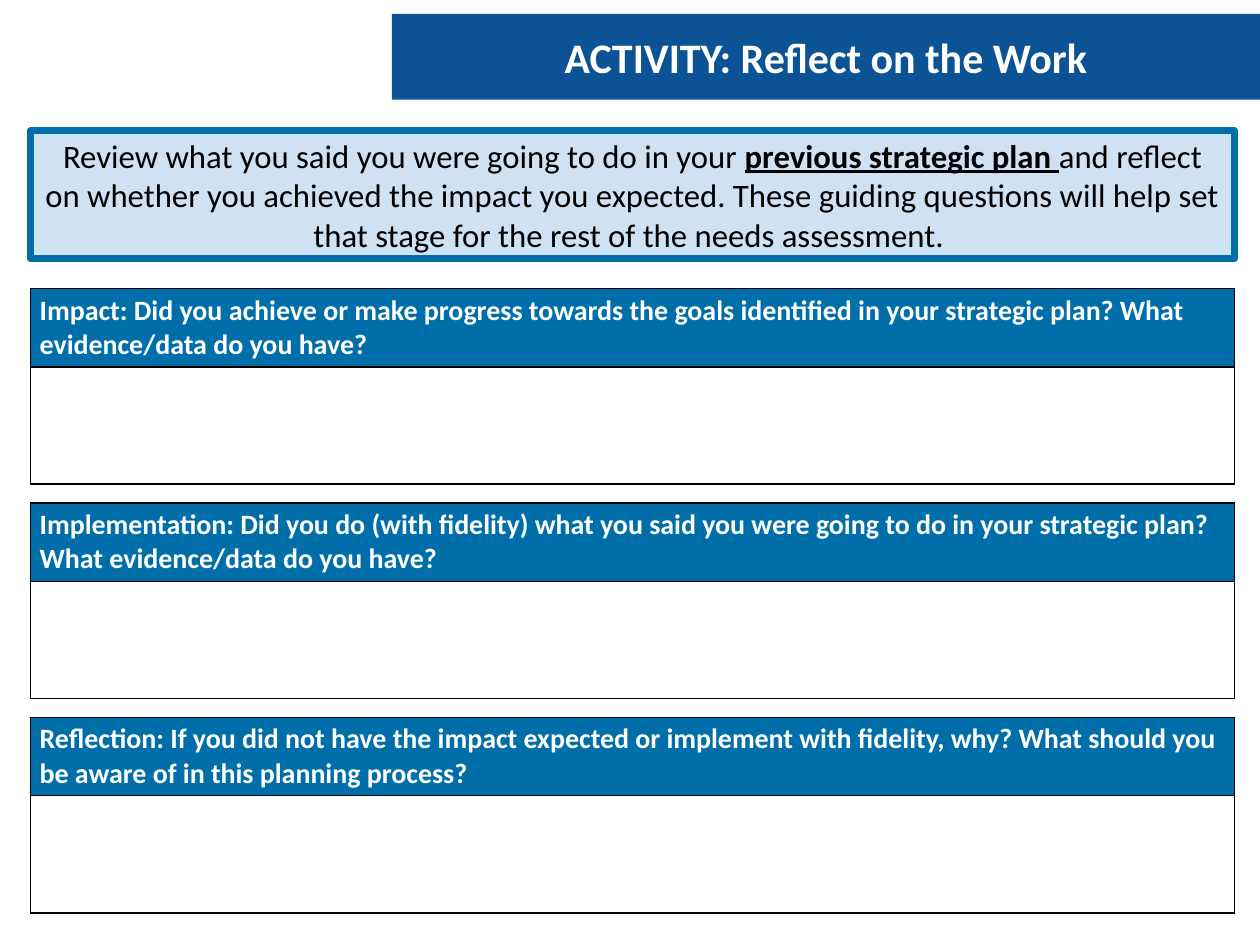
from lxml import etree
from pptx import Presentation
from pptx.dml.color import RGBColor as RGB
from pptx.enum.shapes import MSO_SHAPE as Shape
from pptx.enum.text import MSO_ANCHOR as Anchor, MSO_AUTO_SIZE as Fit, PP_ALIGN as Align
from pptx.oxml.ns import qn
from pptx.util import Cm, Pt

COLORS = {"navy": "0B5394", "blue": "006FA9", "pale": "CFE2F3",
          "white": "FFFFFF", "black": "000000"}
LEFT, WIDTH = Cm(0.61), Cm(24.28)
TOP, STEP = 5.82, 4.32
ROWS = [Cm(1.55), Cm(2.36)]
PADS = ("margin_left", "margin_top", "margin_right", "margin_bottom")

prs = Presentation()
prs.slide_width, prs.slide_height = Cm(25.4), Cm(19.05)
slide = prs.slides.add_slide(prs.slide_layouts[5])


def paint(item, color):
    item.fill.solid()
    item.fill.fore_color.rgb = RGB.from_string(COLORS[color])


def write(para, text, color, **style):
    run = para.add_run()
    run.text = text
    run.font.color.rgb = RGB.from_string(COLORS[color])
    for name, value in {"name": "Calibri", **style}.items():
        setattr(run.font, name, value)


title = slide.shapes.title
title.left, title.top, title.width, title.height = Cm(7.9), Cm(0.28), Cm(17.5), Cm(1.73)
paint(title, "navy")
write(title.text_frame.paragraphs[0], "ACTIVITY: Reflect on the Work", "white",
      size=Pt(24), bold=True)

intro = slide.shapes.add_shape(Shape.RECTANGLE, LEFT, Cm(2.64), WIDTH, Cm(2.57))
intro.shadow.inherit = False
paint(intro, "pale")
intro.line.color.rgb = RGB.from_string(COLORS["blue"])
intro.line.width = Pt(4)
parts = [
    ("Review what you said you were going to do in your ", False),
    ("previous strategic plan ", True),
    ("and reflect on whether you achieved the impact you expected. These guiding "
     "questions will help set that stage for the rest of the needs assessment. ", False),
]
for text, strong in parts:
    write(intro.text_frame.paragraphs[0], text, "black",
          size=Pt(18.7), bold=strong, underline=strong)

for box, pads in ((title, (0.33, 0.18)), (intro, (0.25, 0.13))):
    frame = box.text_frame
    form = {"word_wrap": True, "auto_size": Fit.NONE, "vertical_anchor": Anchor.MIDDLE}
    form.update(zip(PADS, [Cm(pad) for pad in pads * 2]))
    for name, value in form.items():
        setattr(frame, name, value)
    frame.paragraphs[0].alignment = Align.CENTER

prompts = [
    "Impact: Did you achieve or make progress towards the goals identified in your "
    "strategic plan? What evidence/data do you have?",
    "Implementation: Did you do (with fidelity) what you said you were going to do in "
    "your strategic plan? What evidence/data do you have?",
    "Reflection: If you did not have the impact expected or implement with fidelity, "
    "why? What should you be aware of in this planning process?",
]
for index, prompt in enumerate(prompts):
    table = slide.shapes.add_table(2, 1, LEFT, Cm(TOP + index * STEP),
                                   WIDTH, sum(ROWS)).table
    for row, height, color in zip(table.rows, ROWS, ("blue", "white")):
        row.height = height
        cell = row.cells[0]
        for name, pad in zip(PADS, (0.19, 0.1) * 2):
            setattr(cell, name, Cm(pad))
        paint(cell, color)
        props = cell._tc.get_or_add_tcPr()
        for spot, side in enumerate(("a:lnL", "a:lnR", "a:lnT", "a:lnB")):
            line = etree.Element(qn(side), w=str(Pt(1)))
            fill = etree.SubElement(line, qn("a:solidFill"))
            etree.SubElement(fill, qn("a:srgbClr"), val=COLORS["black"])
            props.insert(spot, line)
    write(table.cell(0, 0).text_frame.paragraphs[0], prompt, "white",
          size=Pt(16), bold=True)

prs.save("out.pptx")
